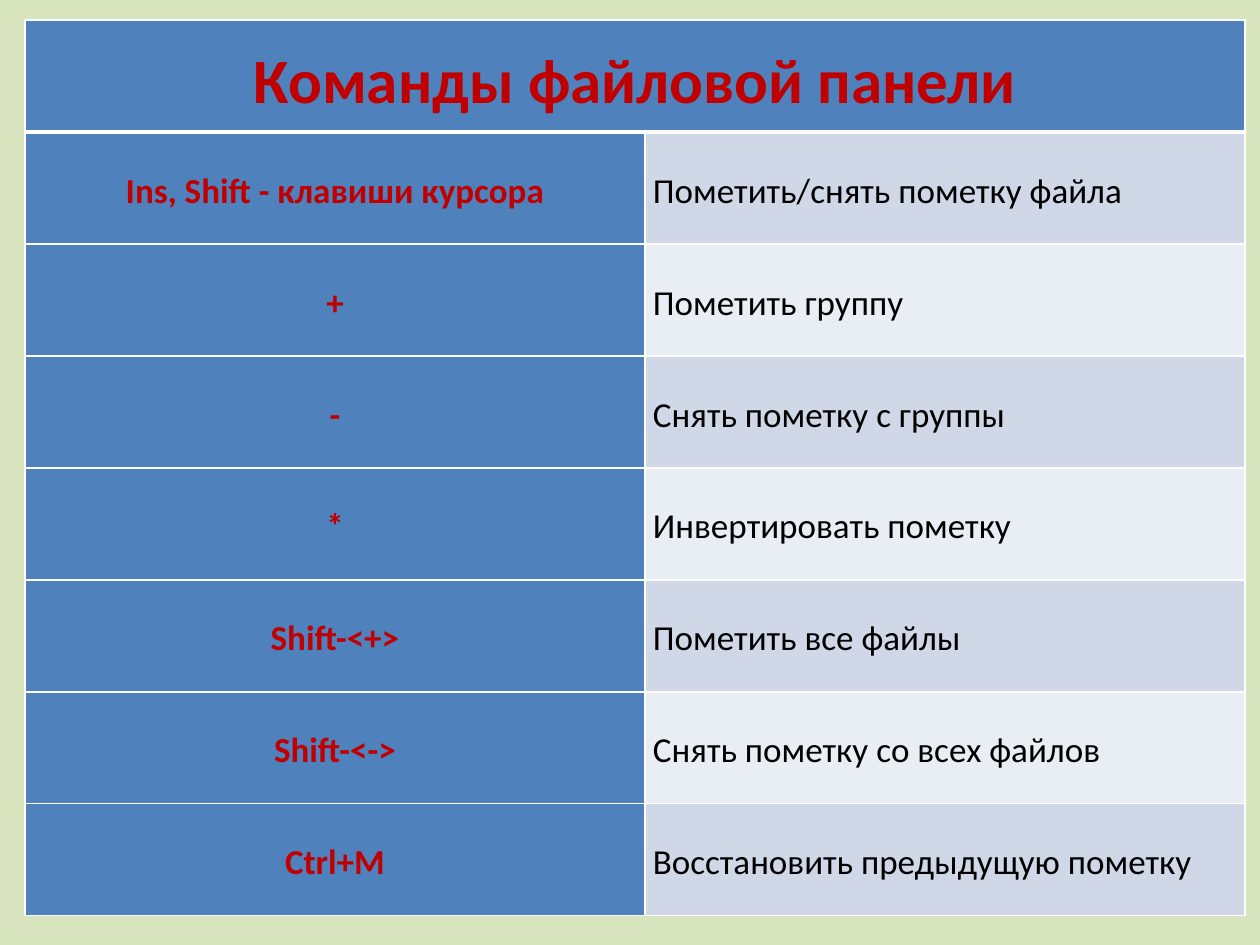
from dataclasses import dataclass

from lxml import etree
from pptx import Presentation
from pptx.dml.color import RGBColor
from pptx.enum.text import MSO_ANCHOR, PP_ALIGN
from pptx.oxml.ns import qn
from pptx.util import Emu, Pt

CENTER, LEFT = PP_ALIGN.CENTER, PP_ALIGN.LEFT
MIDDLE = MSO_ANCHOR.MIDDLE
PX_PER_INCH = 126


@dataclass(frozen=True)
class Theme:
    font: str = "Calibri"
    background: str = "D7E4BD"
    header: str = "4F81BD"
    bands: tuple = ("D0D8E8", "E9EDF4")
    key: str = "C00000"
    text: str = "000000"
    border: str = "FFFFFF"
    title_size: int = 36
    body_size: int = 20
    line_spacing: float = 1.15
    thin: int = 1
    thick: int = 3


def px(n):
    return Emu(round(n * 914400 / PX_PER_INCH))


def rgb(code):
    return RGBColor.from_string(code)


class SlideBuilder:
    def __init__(self, prs, theme):
        self.theme = theme
        self.s = prs.slides.add_slide(prs.slide_layouts[6])
        fill = self.s.background.fill
        fill.solid()
        fill.fore_color.rgb = rgb(theme.background)

    def table(self, x, y, col_widths, row_height, row_count):
        frame = self.s.shapes.add_table(row_count, len(col_widths), px(x), px(y),
                                        px(sum(col_widths)), px(row_height * row_count))
        table = frame.table
        for col, width in zip(table.columns, col_widths):
            col.width = px(width)
        for row in table.rows:
            row.height = px(row_height)
        return table

    def borders(self, cell, top, bottom):
        """Draw the four cell borders; they must precede the fill in tcPr."""
        tc_pr = cell._tc.get_or_add_tcPr()
        widths = {"a:lnL": self.theme.thin, "a:lnR": self.theme.thin,
                  "a:lnT": top, "a:lnB": bottom}
        for i, (tag, width) in enumerate(widths.items()):
            ln = etree.Element(qn(tag), w=str(Pt(width)))
            solid = etree.SubElement(ln, qn("a:solidFill"))
            etree.SubElement(solid, qn("a:srgbClr"), val=self.theme.border)
            tc_pr.insert(i, ln)

    def cell(self, cell, text, fill, color, size, bold=False, align=LEFT,
             indent=0, top=None, bottom=None):
        cell.fill.solid()
        cell.fill.fore_color.rgb = rgb(fill)
        cell.vertical_anchor = MIDDLE
        cell.margin_left = px(indent)
        cell.margin_right = cell.margin_top = cell.margin_bottom = 0
        self.borders(cell, top or self.theme.thin, bottom or self.theme.thin)
        p = cell.text_frame.paragraphs[0]
        p.alignment = align
        p.line_spacing = self.theme.line_spacing
        r = p.add_run()
        r.text = text
        r.font.name = self.theme.font
        r.font.size = Pt(size)
        r.font.bold = bold
        r.font.color.rgb = rgb(color)


TITLE = "Команды файловой панели"
COMMANDS = [
    ("Ins, Shift - клавиши курсора", "Пометить/снять пометку файла"),
    ("+", "Пометить группу"),
    ("-", "Снять пометку с группы"),
    ("*", "Инвертировать пометку"),
    ("Shift-<+>", "Пометить все файлы"),
    ("Shift-<->", "Снять пометку со всех файлов"),
    ("Ctrl+M", "Восстановить предыдущую пометку"),
]


def main():
    prs = Presentation()
    prs.slide_width, prs.slide_height = px(1260), px(945)
    theme = Theme()
    slide = SlideBuilder(prs, theme)
    table = slide.table(25, 20, (620, 600), 112, len(COMMANDS) + 1)

    title = table.cell(0, 0)
    title.merge(table.cell(0, 1))
    slide.cell(title, TITLE, theme.header, theme.key, theme.title_size,
               bold=True, align=CENTER, bottom=theme.thick)
    slide.borders(table.cell(0, 1), theme.thin, theme.thick)

    for i, (keys, action) in enumerate(COMMANDS):
        top = theme.thick if i == 0 else theme.thin
        slide.cell(table.cell(i + 1, 0), keys, theme.header, theme.key,
                   theme.body_size, bold=True, align=CENTER, top=top)
        slide.cell(table.cell(i + 1, 1), action, theme.bands[i % 2], theme.text,
                   theme.body_size, indent=8, top=top)

    prs.save("out.pptx")


if __name__ == "__main__":
    main()
